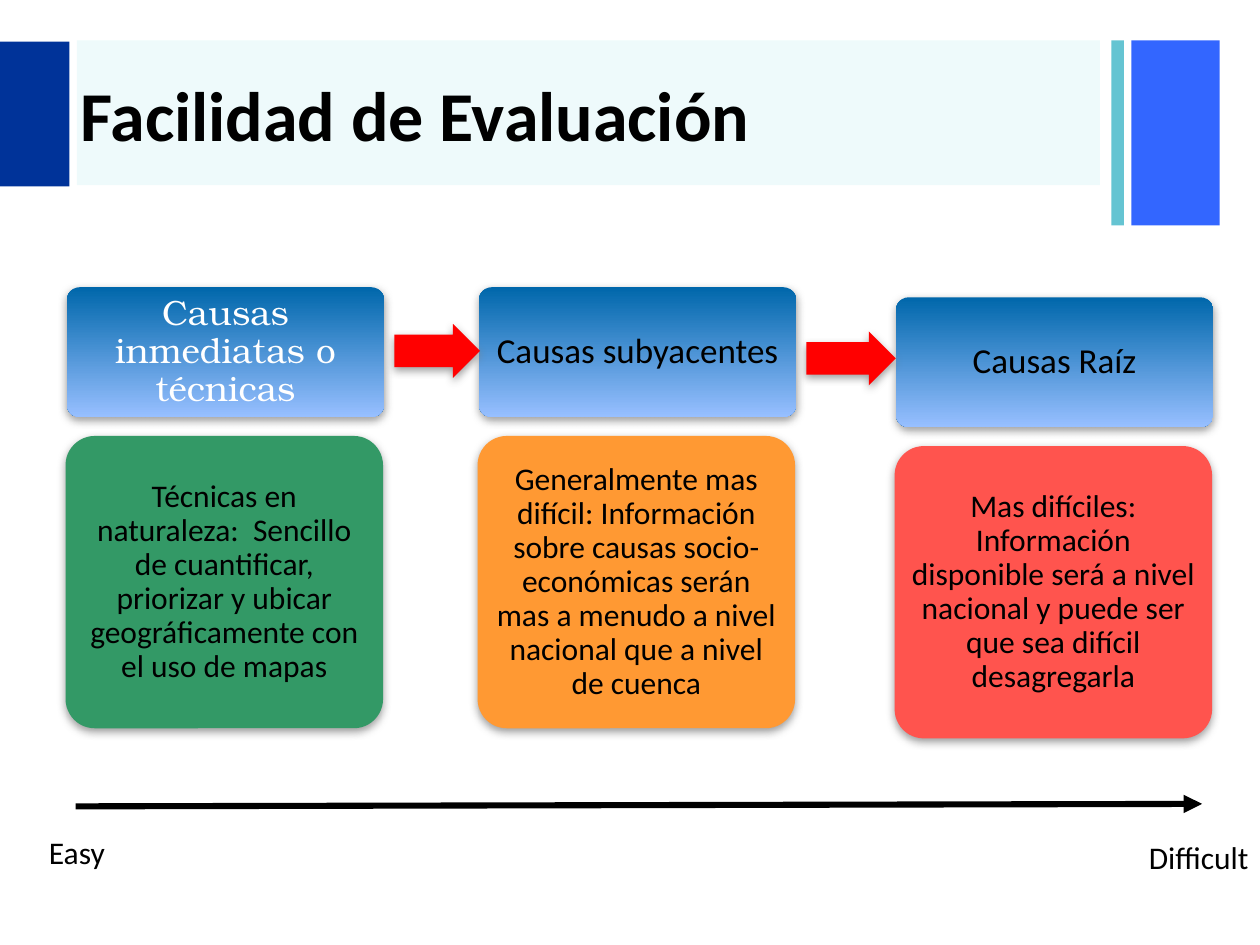
from dataclasses import dataclass

from lxml import etree
from pptx import Presentation
from pptx.dml.color import RGBColor
from pptx.enum.shapes import MSO_CONNECTOR as Connector, MSO_SHAPE as Shape
from pptx.enum.text import MSO_ANCHOR as Anchor, PP_ALIGN as Align
from pptx.oxml.ns import qn
from pptx.util import Inches, Pt


@dataclass(frozen=True)
class Theme:
    font: str = "Calibri"
    serif: str = "TeX Gyre Bonum"
    title_size: int = 40
    heading_size: int = 20
    body_size: int = 18
    black: str = "000000"
    white: str = "FFFFFF"
    navy: str = "003399"
    royal: str = "3366FF"
    teal: str = "65C4D2"
    banner: str = "14C5D0"
    banner_opacity: int = 7
    gradient: tuple = ("0067AB", "97BFFF")
    green: str = "339966"
    orange: str = "FF9933"
    coral: str = "FF544E"
    arrow: str = "FF0000"
    shadow: str = "808080"


THEME = Theme()

# left, top, heading, heading font, heading colour, body, body colour
CAUSES = [
    (0.53, 2.28, "Causas inmediatas o técnicas", THEME.serif, THEME.white,
     "Técnicas en naturaleza:  Sencillo de cuantificar, priorizar y ubicar "
     "geográficamente con el uso de mapas", THEME.green),
    (3.80, 2.28, "Causas subyacentes", THEME.font, THEME.black,
     "Generalmente mas difícil: Información sobre causas socio-económicas "
     "serán mas a menudo a nivel nacional que a nivel de cuenca", THEME.orange),
    (7.11, 2.36, "Causas Raíz", THEME.font, THEME.black,
     "Mas difíciles: Información disponible será a nivel nacional y puede ser "
     "que sea difícil desagregarla", THEME.coral),
]
STEP_ARROWS = [(3.13, 2.57, 0.68, 0.43), (6.40, 2.63, 0.71, 0.43)]


def rgb(color):
    return RGBColor.from_string(color)


def set_font(paragraph, size, color, name=THEME.font, bold=False):
    font = paragraph.font
    font.name, font.size, font.bold = name, Pt(size), bold
    font.color.rgb = rgb(color)


def add_block(slide, kind, box, color):
    """Add a borderless shape filled with one colour, or a vertical gradient for a pair."""
    block = slide.shapes.add_shape(kind, *map(Inches, box))
    block.shadow.inherit = False
    block.line.fill.background()
    if isinstance(color, tuple):
        block.fill.gradient()
        block.fill.gradient_angle = 270
        for stop, stop_color in zip(block.fill.gradient_stops, color):
            stop.color.rgb = rgb(stop_color)
    else:
        block.fill.solid()
        block.fill.fore_color.rgb = rgb(color)
    return block


def set_opacity(color_element, percent):
    etree.SubElement(color_element, qn("a:alpha"), val=str(percent * 1000))


def add_soft_shadow(block):
    effects = block._element.spPr.find(qn("a:effectLst"))
    shadow = etree.SubElement(
        effects, qn("a:outerShdw"), blurRad=str(Pt(5)), dist=str(Pt(2)),
        dir="5400000", rotWithShape="0")
    color = etree.SubElement(shadow, qn("a:srgbClr"), val=THEME.shadow)
    set_opacity(color, 75)


def add_card(slide, box, fill, text, size, color, font, margin):
    card = add_block(slide, Shape.ROUNDED_RECTANGLE, box, fill)
    card.adjustments[0] = 0.1
    add_soft_shadow(card)
    frame = card.text_frame
    frame.word_wrap = True
    frame.vertical_anchor = Anchor.MIDDLE
    frame.margin_left = frame.margin_right = Inches(margin)
    frame.margin_top = frame.margin_bottom = Inches(margin)
    paragraph = frame.paragraphs[0]
    paragraph.text = text
    paragraph.alignment = Align.CENTER
    paragraph.line_spacing = 0.9
    set_font(paragraph, size, color, font)


def add_label(slide, box, text, size, bold=False, wrap=False, anchor=Anchor.TOP):
    frame = slide.shapes.add_textbox(*map(Inches, box)).text_frame
    frame.word_wrap = wrap
    frame.vertical_anchor = anchor
    paragraph = frame.paragraphs[0]
    paragraph.text = text
    set_font(paragraph, size, THEME.black, bold=bold)


def add_header(slide, left, top):
    add_block(slide, Shape.RECTANGLE, (left + 8.98, top, 0.7, 1.47), THEME.royal)
    add_block(slide, Shape.RECTANGLE, (left + 8.82, top, 0.1, 1.47), THEME.teal)
    banner = add_block(slide, Shape.RECTANGLE, (left + 0.61, top, 8.12, 1.15), THEME.banner)
    set_opacity(banner._element.spPr.find(qn("a:solidFill"))[0], THEME.banner_opacity)
    add_block(slide, Shape.RECTANGLE, (left, top + 0.01, 0.55, 1.15), THEME.navy)
    add_label(slide, (left + 0.54, top + 0.02, 8.27, 1.12), "Facilidad de Evaluación",
              THEME.title_size, bold=True, wrap=True, anchor=Anchor.MIDDLE)


def add_cause(slide, left, top, heading, heading_font, heading_color, body, body_fill):
    """Add one column: a gradient heading card above its explanation card."""
    add_card(slide, (left, top, 2.52, 1.03), THEME.gradient, heading,
             THEME.heading_size, heading_color, heading_font, 0.08)
    add_card(slide, (left - 0.01, top + 1.18, 2.52, 2.32), body_fill, body,
             THEME.body_size, THEME.black, THEME.font, 0.05)


def add_step_arrow(slide, box):
    arrow = add_block(slide, Shape.RIGHT_ARROW, box, THEME.arrow)
    arrow.adjustments[0] = 0.6
    arrow.adjustments[1] = 0.5
    add_soft_shadow(arrow)


def add_difficulty_scale(slide, left, top):
    scale = slide.shapes.add_connector(
        Connector.STRAIGHT, Inches(left + 0.31), Inches(top + 0.02),
        Inches(left + 9.25), Inches(top))
    scale.line.color.rgb = rgb(THEME.black)
    scale.line.width = Pt(3.5)
    etree.SubElement(scale.line._get_or_add_ln(), qn("a:tailEnd"), type="triangle")
    etree.SubElement(scale._element.spPr, qn("a:effectLst"))
    add_label(slide, (left, top + 0.18, 0.66, 0.4), "Easy", THEME.body_size)
    add_label(slide, (left + 8.73, top + 0.22, 1, 0.4), "Difficult", THEME.body_size)


def main():
    deck = Presentation()
    deck.slide_width, deck.slide_height = Inches(10), Inches(7.5)
    slide = deck.slides.add_slide(deck.slide_layouts[6])
    add_header(slide, 0, 0.32)
    for cause in CAUSES:
        add_cause(slide, *cause)
    for box in STEP_ARROWS:
        add_step_arrow(slide, box)
    add_difficulty_scale(slide, 0.29, 6.38)
    deck.save("out.pptx")


if __name__ == "__main__":
    main()
